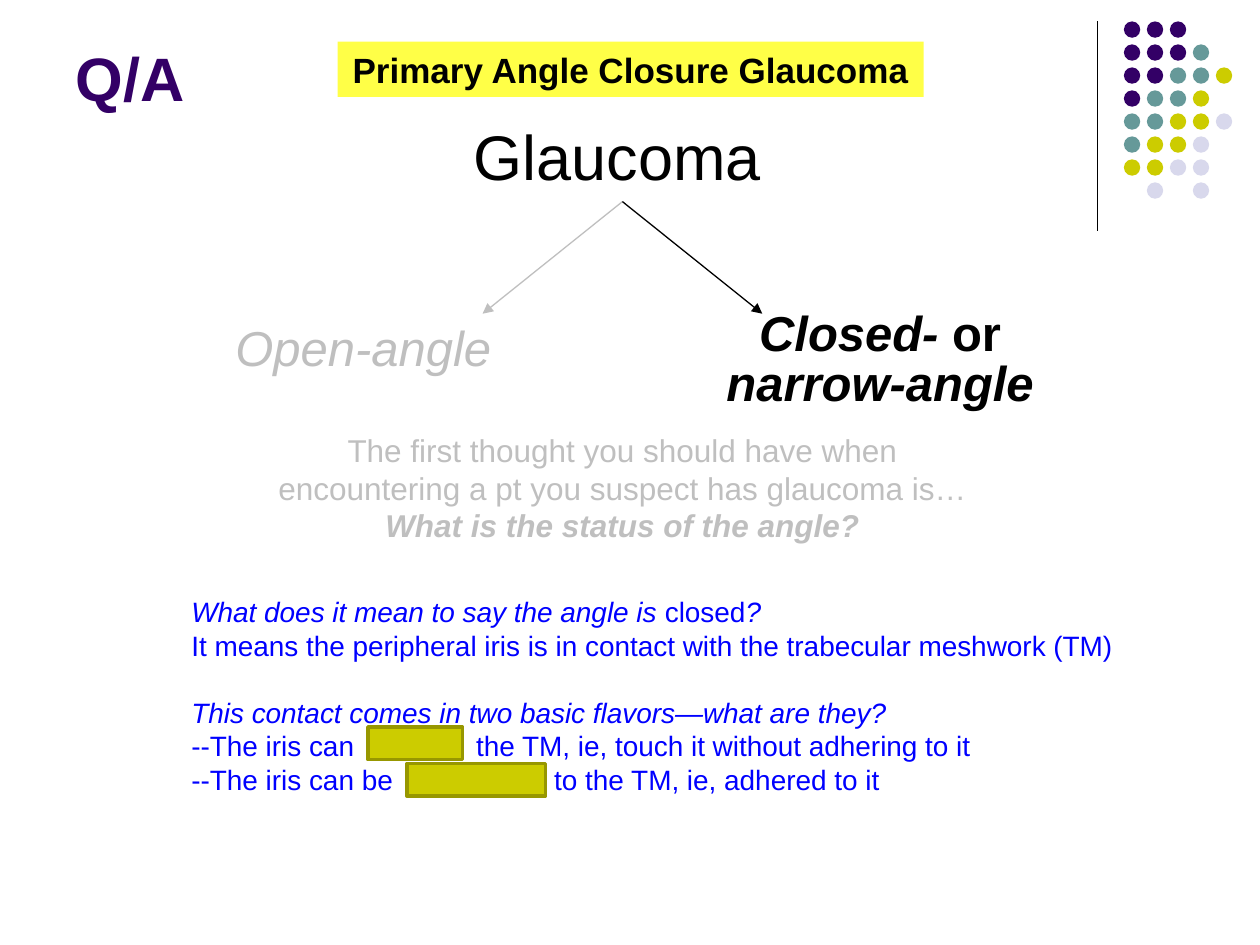
from dataclasses import dataclass
from typing import NamedTuple

from lxml.etree import SubElement
from pptx import Presentation
from pptx.dml.color import RGBColor
from pptx.enum.shapes import MSO_CONNECTOR, MSO_SHAPE
from pptx.enum.text import MSO_ANCHOR, MSO_AUTO_SIZE, PP_ALIGN
from pptx.oxml.ns import qn
from pptx.util import Inches, Pt


@dataclass(frozen=True)
class Theme:
    font: str = "Arial"
    black: str = "000000"
    muted: str = "BFBFBF"
    purple: str = "330066"
    teal: str = "669999"
    olive: str = "CCCC00"
    olive_border: str = "979700"
    lavender: str = "D8D8EC"
    blue: str = "0000FF"
    yellow: str = "FFFF47"
    title_size: int = 35
    root_size: int = 36
    branch_size: int = 28
    banner_size: int = 20
    prompt_size: int = 18
    answer_size: int = 16


class Box(NamedTuple):
    left: float
    top: float
    width: float
    height: float


class Span(NamedTuple):
    text: str
    italic: bool = False
    bold: bool = False
    tab_stop: float | None = None


class Label(NamedTuple):
    box: Box
    lines: list[list[Span]]
    size: int
    color: str
    align: PP_ALIGN = PP_ALIGN.LEFT
    line_spacing: float | None = None
    gap_line: int | None = None


class Line(NamedTuple):
    start: tuple[float, float]
    end: tuple[float, float]
    color: str
    arrow: bool = True


THEME = Theme()
DOT_COLORS = {"p": THEME.purple, "t": THEME.teal, "o": THEME.olive, "l": THEME.lavender}
DOT_ROWS = ["ppp", "pppt", "pptto", "ptto", "ttool", "tool", "ooll", ".l.l"]
DOT_LEFT, DOT_TOP, DOT_SIZE, DOT_STEP = 8.92, 0.17, 0.13, 0.73 / 4

LABELS = [
    Label(
        Box(2.08, 3.37, 5.72, 1.01),
        [
            [Span("The first thought you should have when")],
            [Span("encountering a pt you suspect has glaucoma is…")],
            [Span("What is the status of the angle?", italic=True, bold=True)],
        ],
        THEME.prompt_size, THEME.muted, PP_ALIGN.CENTER,
    ),
    Label(Box(3.66, 0.88, 2.48, 0.7), [[Span("Glaucoma")]], THEME.root_size, THEME.black),
    Label(
        Box(5.65, 2.42, 2.67, 0.9),
        [
            [Span("Closed- ", italic=True, bold=True), Span("or", bold=True)],
            [Span("narrow-angle", italic=True, bold=True)],
        ],
        THEME.branch_size, THEME.black, PP_ALIGN.CENTER, line_spacing=0.85,
    ),
    Label(
        Box(1.77, 2.47, 2.24, 0.57), [[Span("Open-angle", italic=True)]],
        THEME.branch_size, THEME.muted,
    ),
    Label(
        Box(1.42, 4.67, 7.62, 1.72),
        [
            [
                Span("What does it mean to say the angle is ", italic=True),
                Span("closed"),
                Span("?", italic=True),
            ],
            [Span("It means the peripheral iris is in contact with the trabecular meshwork (TM)")],
            [Span("This contact comes in two basic flavors—what are they?", italic=True)],
            [
                Span("--The iris can"),
                Span("the TM, ie, touch it without adhering to it", tab_stop=2.26),
            ],
            [Span("--The iris can be"), Span("to the TM, ie, adhered to it", tab_stop=2.88)],
        ],
        THEME.answer_size, THEME.blue, gap_line=2,
    ),
]

FORK = (4.94, 1.6)
LINES = [
    Line((8.71, 0.17), (8.71, 1.83), THEME.black, arrow=False),
    Line(FORK, (3.83, 2.49), THEME.muted),
    Line(FORK, (6.05, 2.49), THEME.black),
]
ANSWER_BLANKS = [Box(2.92, 5.77, 0.75, 0.26), Box(3.23, 6.06, 1.1, 0.26)]


def add_tab_stop(paragraph, position: float) -> None:
    tab_list = SubElement(paragraph._p.get_or_add_pPr(), qn("a:tabLst"))
    SubElement(tab_list, qn("a:tab"), pos=str(int(Inches(position))), algn="l")


def write_text(
    text_frame, lines: list[list[Span]], *, size: int, color: str,
    align: PP_ALIGN = PP_ALIGN.LEFT, line_spacing: float | None = None,
    gap_line: int | None = None,
) -> None:
    for index, spans in enumerate(lines):
        paragraph = text_frame.paragraphs[0] if index == 0 else text_frame.add_paragraph()
        paragraph.alignment = align
        if line_spacing is not None:
            paragraph.line_spacing = line_spacing
        if index == gap_line:
            paragraph.space_before = Pt(size * 1.2)
        for span in spans:
            run = paragraph.add_run()
            run.text = span.text
            if span.tab_stop is not None:
                add_tab_stop(paragraph, span.tab_stop)
                run.text = "\t" + span.text
            run.font.name = THEME.font
            run.font.size = Pt(size)
            run.font.bold = span.bold
            run.font.italic = span.italic
            run.font.color.rgb = RGBColor.from_string(color)


def add_label(slide, label: Label) -> None:
    text_frame = slide.shapes.add_textbox(*map(Inches, label.box)).text_frame
    text_frame.word_wrap = False
    text_frame.auto_size = MSO_AUTO_SIZE.SHAPE_TO_FIT_TEXT
    write_text(
        text_frame, label.lines, size=label.size, color=label.color, align=label.align,
        line_spacing=label.line_spacing, gap_line=label.gap_line,
    )


def add_filled_shape(slide, kind: MSO_SHAPE, box: Box, fill: str, border: str | None = None):
    shape = slide.shapes.add_shape(kind, *map(Inches, box))
    shape.shadow.inherit = False
    shape.fill.solid()
    shape.fill.fore_color.rgb = RGBColor.from_string(fill)
    if border:
        shape.line.color.rgb = RGBColor.from_string(border)
        shape.line.width = Pt(2)
    else:
        shape.line.fill.background()
    return shape


def add_line(slide, line: Line) -> None:
    connector = slide.shapes.add_connector(
        MSO_CONNECTOR.STRAIGHT, *map(Inches, (*line.start, *line.end))
    )
    connector.line.color.rgb = RGBColor.from_string(line.color)
    connector.line.width = Pt(0.75)
    if line.arrow:
        SubElement(connector.line._get_or_add_ln(), qn("a:tailEnd"), type="triangle")
    SubElement(connector._element.spPr, qn("a:effectLst"))


def add_dots(slide) -> None:
    for row, codes in enumerate(DOT_ROWS):
        for column, code in enumerate(codes):
            if code in DOT_COLORS:
                box = Box(DOT_LEFT + column * DOT_STEP, DOT_TOP + row * DOT_STEP, DOT_SIZE, DOT_SIZE)
                add_filled_shape(slide, MSO_SHAPE.OVAL, box, DOT_COLORS[code])


def add_title(slide) -> None:
    title = slide.shapes.title
    title.left, title.top, title.width, title.height = map(Inches, (0.5, 0.33, 8.25, 0.62))
    frame = title.text_frame
    frame.auto_size, frame.vertical_anchor = MSO_AUTO_SIZE.NONE, MSO_ANCHOR.BOTTOM
    write_text(frame, [[Span("Q/A", bold=True)]], size=THEME.title_size, color=THEME.purple)


def add_banner(slide) -> None:
    banner = add_filled_shape(slide, MSO_SHAPE.RECTANGLE, Box(2.68, 0.33, 4.65, 0.44), THEME.yellow)
    frame = banner.text_frame
    frame.word_wrap, frame.auto_size = False, MSO_AUTO_SIZE.SHAPE_TO_FIT_TEXT
    write_text(
        frame, [[Span("Primary Angle Closure Glaucoma", bold=True)]],
        size=THEME.banner_size, color=THEME.black, align=PP_ALIGN.CENTER,
    )


def main() -> None:
    presentation = Presentation()
    presentation.slide_width, presentation.slide_height = Inches(10), Inches(7.5)
    slide = presentation.slides.add_slide(presentation.slide_layouts[5])
    add_title(slide)
    add_dots(slide)
    for label in LABELS:
        add_label(slide, label)
    for line in LINES:
        add_line(slide, line)
    for box in ANSWER_BLANKS:
        add_filled_shape(slide, MSO_SHAPE.RECTANGLE, box, THEME.olive, THEME.olive_border)
    add_banner(slide)
    presentation.save("out.pptx")


if __name__ == "__main__":
    main()
